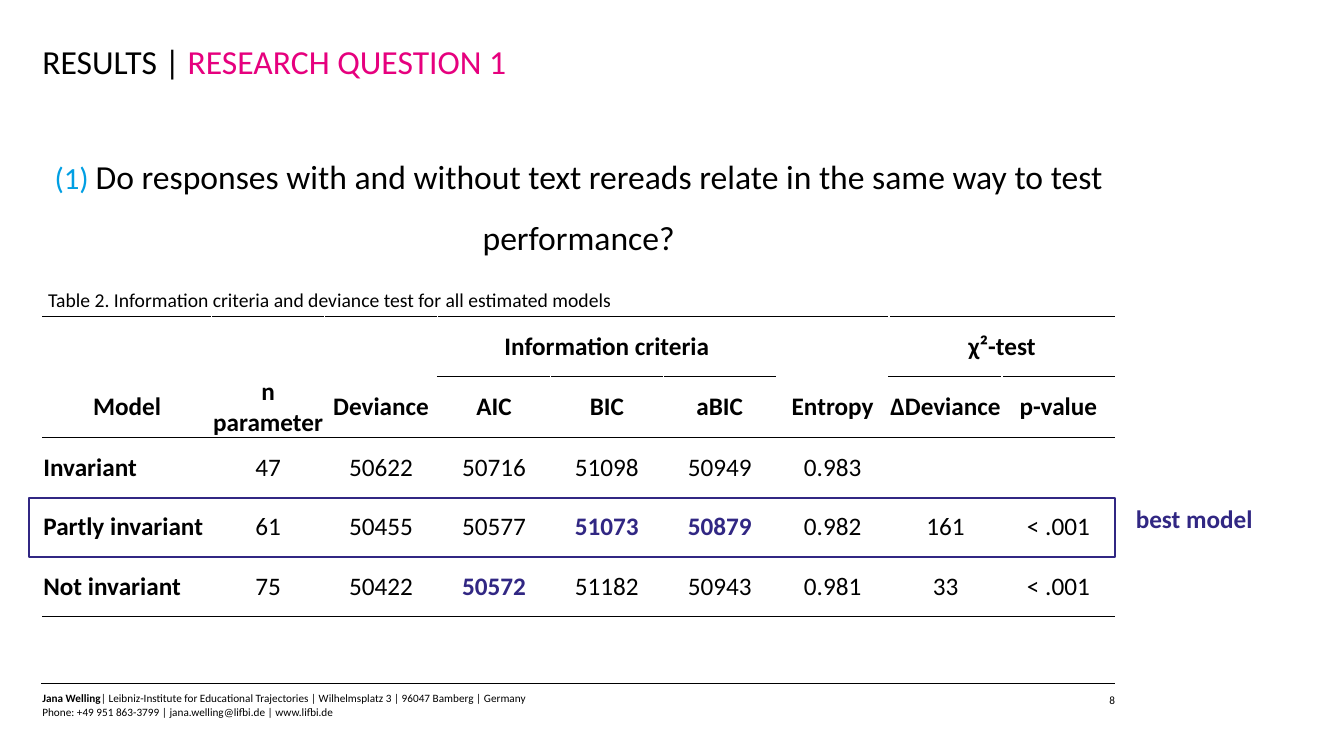
from lxml import etree
from pptx import Presentation
from pptx.dml.color import RGBColor
from pptx.enum.shapes import MSO_CONNECTOR, MSO_SHAPE
from pptx.enum.text import MSO_ANCHOR, PP_ALIGN
from pptx.oxml.ns import qn
from pptx.util import Inches, Pt

LEFT, CENTER, RIGHT = PP_ALIGN.LEFT, PP_ALIGN.CENTER, PP_ALIGN.RIGHT
TOP, MIDDLE = MSO_ANCHOR.TOP, MSO_ANCHOR.MIDDLE
RECT, STRAIGHT = MSO_SHAPE.RECTANGLE, MSO_CONNECTOR.STRAIGHT

# Content
COLORS = {"black": "000000", "white": "FFFFFF", "pink": "E6007E",
          "cyan": "009FE3", "violet": "312783"}
FONT = "Calibri"
TITLE = [("RESULTS | ", {}), ("RESEARCH QUESTION 1", {"color": "pink"})]
QUESTION = [
    ("(1) ", {"size": 22, "color": "cyan"}),
    ("Do responses with and without text rereads relate in the same way "
     "to test performance?", {}),
]
CAPTION = "Table 2. Information criteria and deviance test for all estimated models"
GROUPS = {"Information criteria": (3, 5), "χ²-test": (7, 8)}
HEADER = ["Model", "n parameter", "Deviance", "AIC", "BIC", "aBIC",
          "Entropy", "ΔDeviance", "p-value"]
MODELS = [
    ["Invariant", "47", "50622", "50716", "51098", "50949", "0.983", "", ""],
    ["Partly invariant", "61", "50455", "50577", "51073", "50879", "0.982",
     "161", "< .001"],
    ["Not invariant", "75", "50422", "50572", "51182", "50943", "0.981",
     "33", "< .001"],
]
LOWEST = {"50572", "51073", "50879"}
FOOTER = [
    [("Jana Welling", {"bold": True}),
     ("| Leibniz-Institute for Educational Trajectories | Wilhelmsplatz 3 "
      "| 96047 Bamberg | Germany", {})],
    [("Phone: +49 951 863-3799 | jana.welling@lifbi.de | www.lifbi.de", {})],
]

# Layout
TABLE_LEFT, TABLE_TOP = 0.42, 3.14
COL_WIDTHS = [1.68] + [1.12] * 8
ROW_HEIGHT = 0.59
WHITE_GAPS = {0: (1, 2, 7), 1: (4, 5, 8)}  # row: column edges that split its rules


def rgb(name):
    return RGBColor.from_string(COLORS[name])


def add_runs(p, runs, size, align=LEFT):
    p.alignment = align
    for text, changes in runs:
        fmt = {"name": FONT, "size": size, "bold": False, "color": "black", **changes}
        r = p.add_run()
        r.text = text
        r.font.color.rgb = rgb(fmt.pop("color"))
        fmt["size"] = Pt(fmt["size"])
        for key, value in fmt.items():
            setattr(r.font, key, value)


def place(sp, left, top, width, height):
    box = {"left": left, "top": top, "width": width, "height": height}
    for key, value in box.items():
        setattr(sp, key, Inches(value))


def set_frame(tf, inset=None):
    tf.word_wrap = True
    tf.vertical_anchor = TOP
    if inset is not None:
        for side in ("left", "top", "right", "bottom"):
            setattr(tf, f"margin_{side}", Inches(inset))


def add_text(box, paragraphs, size, align=LEFT, inset=None):
    tf = s.shapes.add_textbox(*map(Inches, box)).text_frame
    set_frame(tf, inset)
    for i, runs in enumerate(paragraphs):
        p = tf.add_paragraph() if i else tf.paragraphs[0]
        add_runs(p, runs, size, align)


def set_borders(cell, borders):
    tcPr = cell._tc.get_or_add_tcPr()
    sides = [side for side in ("L", "R", "T", "B") if side in borders]
    for i, side in enumerate(sides):
        color, width = borders[side]
        ln = etree.Element(qn(f"a:ln{side}"), w=str(Pt(width)))
        fill = etree.SubElement(ln, qn("a:solidFill"))
        etree.SubElement(fill, qn("a:srgbClr"), val=COLORS[color])
        tcPr.insert(i, ln)


def has_rule(edge, col):
    grouped = any(first <= col <= last for first, last in GROUPS.values())
    return edge in (0, 2, 5) or (edge == 1 and grouped)


prs = Presentation()
prs.slide_width, prs.slide_height = Inches(13.33), Inches(7.5)
s = prs.slides.add_slide(prs.slide_layouts[1])

# Title and question
title, body = s.placeholders
place(title, 0.42, 0.41, 10.65, 0.83)
set_frame(title.text_frame, 0)
add_runs(title.text_frame.paragraphs[0], TITLE, 24)

place(body, 0.42, 1.35, 10.64, 4.84)
set_frame(body.text_frame, 0)
p = body.text_frame.paragraphs[0]
pPr = p._p.get_or_add_pPr()
pPr.set("marL", "0")
pPr.set("indent", "0")
etree.SubElement(pPr, qn("a:buNone"))
p.line_spacing, p.space_before, p.space_after = 1.5, Pt(0), Pt(12)
add_runs(p, QUESTION, 24, CENTER)

# Footer
line = s.shapes.add_connector(STRAIGHT, Inches(0.41), Inches(6.78),
                              Inches(11.06), Inches(6.78))
line.line.color.rgb = rgb("black")
line.line.width = Pt(0.5)
etree.SubElement(line._element.spPr, qn("a:effectLst"))
add_text((10.43, 6.88, 0.63, 0.13), [[("8", {})]], 8, RIGHT, 0)
add_text((0.42, 6.86, 8.13, 0.27), FOOTER, 8, LEFT, 0)

# Table
group_row = [""] * len(HEADER)
for name, (first, last) in GROUPS.items():
    group_row[first] = name
rows = [group_row, HEADER] + MODELS
frame = s.shapes.add_table(
    len(rows), len(HEADER), Inches(TABLE_LEFT), Inches(TABLE_TOP),
    Inches(sum(COL_WIDTHS)), Inches(ROW_HEIGHT * len(rows)))
table = frame.table
table.first_row = table.horz_banding = False
table._tbl.tblPr.find(qn("a:tableStyleId")).text = "{2D5ABB26-0587-4C30-8999-92F81FD0307C}"
for column, width in zip(table.columns, COL_WIDTHS):
    column.width = Inches(width)
for i, values in enumerate(rows):
    table.rows[i].height = Inches(ROW_HEIGHT)
    for j, text in enumerate(values):
        cell = table.cell(i, j)
        cell.fill.solid()
        cell.fill.fore_color.rgb = rgb("white")
        cell.vertical_anchor = MIDDLE
        cell.margin_left = cell.margin_right = cell.margin_top = Inches(0.01)
        cell.margin_bottom = 0
        borders = {side: ("white", 1) for side, edge in (("L", j), ("R", j + 1))
                   if edge in WHITE_GAPS.get(i, ())}
        borders.update({side: ("black", 0.5) for side, edge in (("T", i), ("B", i + 1))
                        if has_rule(edge, j)})
        set_borders(cell, borders)
        if text:
            lowest = text in LOWEST
            fmt = {"bold": i < 2 or j == 0 or lowest,
                   "color": "violet" if lowest else "black"}
            align = LEFT if i > 1 and j == 0 else CENTER
            add_runs(cell.text_frame.paragraphs[0], [(text, fmt)], 18, align)
for first, last in GROUPS.values():
    table.cell(0, first).merge(table.cell(0, last))

# Best model highlight
frame_box = s.shapes.add_shape(RECT, *map(Inches, (0.29, 4.94, 10.77, ROW_HEIGHT)))
frame_box.shadow.inherit = False
frame_box.fill.background()
frame_box.line.color.rgb = rgb("violet")
frame_box.line.width = Pt(1.5)
add_text((11.06, 4.94, 1.57, 0.4),
         [[("best model", {"bold": True, "color": "violet"})]], 18, CENTER)

# Table caption
add_text((0.38, 2.81, 6.69, 0.34), [[(CAPTION, {})]], 14)

prs.save("out.pptx")
